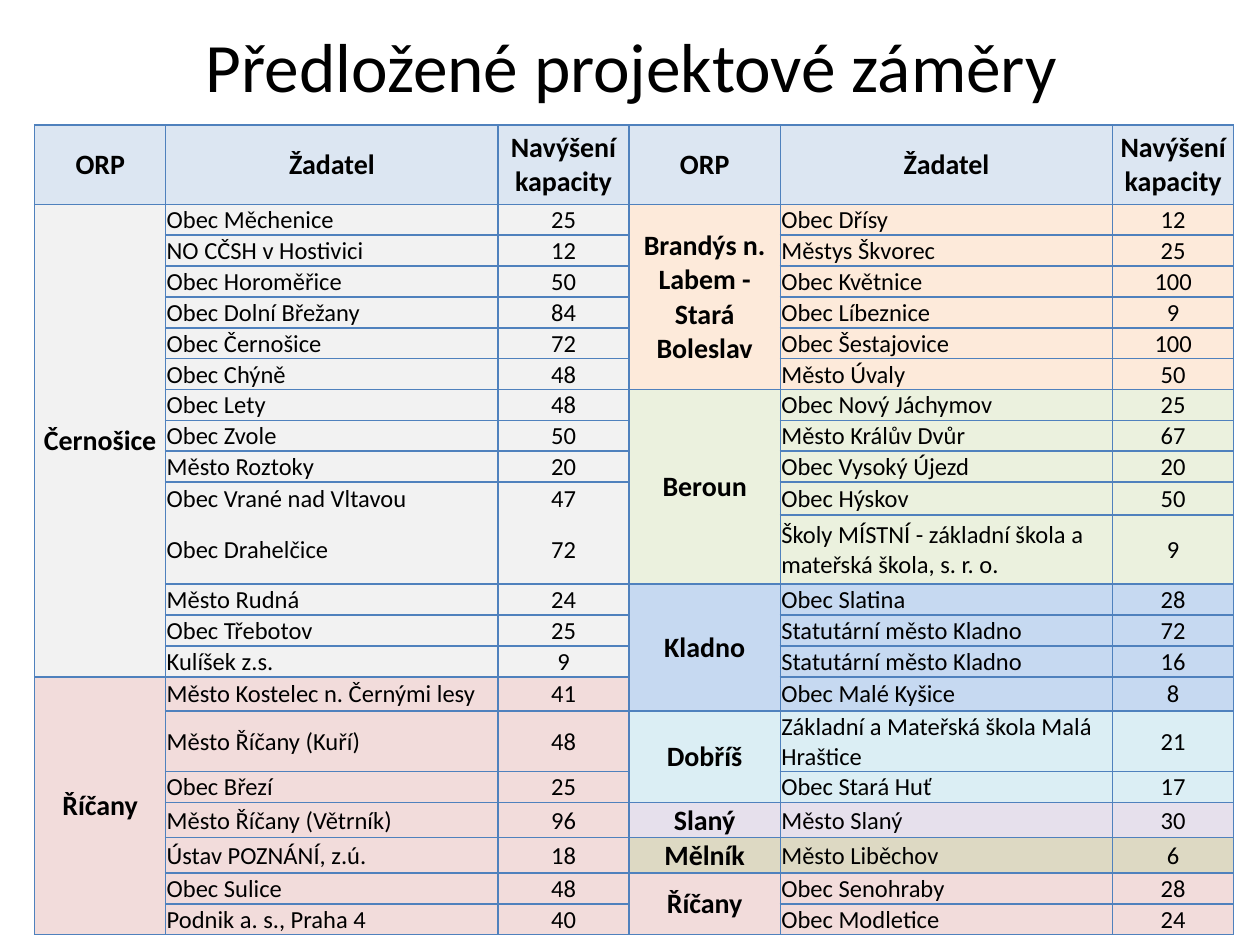
from lxml.etree import SubElement
from pptx import Presentation
from pptx.dml.color import RGBColor
from pptx.enum.text import MSO_ANCHOR, MSO_AUTO_SIZE, PP_ALIGN
from pptx.oxml import parse_xml
from pptx.oxml.ns import nsdecls, qn
from pptx.util import Cm, Pt

# Content
TITLE = "Předložené projektové záměry"
HEADERS = ["ORP", "Žadatel", "Navýšení kapacity"]

# Per half of the table: (region, fill name, [(applicant, capacity, rows if not 1)])
LEFT = [
    ("Černošice", "grey", [
        ("Obec Měchenice", 25), ("NO CČSH v Hostivici", 12),
        ("Obec Horoměřice", 50), ("Obec Dolní Břežany", 84),
        ("Obec Černošice", 72), ("Obec Chýně", 48),
        ("Obec Lety", 48), ("Obec Zvole", 50),
        ("Město Roztoky", 20), ("Obec Vrané nad Vltavou", 47),
        ("Obec Drahelčice", 72, 2), ("Město Rudná", 24),
        ("Obec Třebotov", 25), ("Kulíšek z.s.", 9)]),
    ("Říčany", "rose", [
        ("Město Kostelec n. Černými lesy", 41), ("Město Říčany (Kuří)", 48),
        ("Obec Březí", 25), ("Město Říčany (Větrník)", 96),
        ("Ústav POZNÁNÍ, z.ú.", 18), ("Obec Sulice", 48),
        ("Podnik a. s., Praha 4", 40)]),
]
RIGHT = [
    ("Brandýs n. Labem - Stará Boleslav", "orange", [
        ("Obec Dřísy", 12), ("Městys Škvorec", 25), ("Obec Květnice", 100),
        ("Obec Líbeznice", 9), ("Obec Šestajovice", 100), ("Město Úvaly", 50)]),
    ("Beroun", "green", [
        ("Obec Nový Jáchymov", 25), ("Město Králův Dvůr", 67),
        ("Obec Vysoký Újezd", 20), ("Obec Hýskov", 50, 2),
        ("Školy MÍSTNÍ - základní škola a mateřská škola, s. r. o.", 9)]),
    ("Kladno", "blue", [
        ("Obec Slatina", 28), ("Statutární město Kladno", 72),
        ("Statutární město Kladno", 16), ("Obec Malé Kyšice", 8)]),
    ("Dobříš", "aqua", [
        ("Základní a Mateřská škola Malá Hraštice", 21), ("Obec Stará Huť", 17)]),
    ("Slaný", "violet", [("Město Slaný", 30)]),
    ("Mělník", "sand", [("Město Liběchov", 6)]),
    ("Říčany", "rose", [("Obec Senohraby", 28), ("Obec Modletice", 24)]),
]
UNRULED = ("Obec Vrané nad Vltavou", "Obec Drahelčice")  # no line between these two

# Theme
THEME = {
    "font": "Calibri", "text": "000000", "line": "4F81BD", "line_width": Pt(1),
    "title_size": Pt(39.6), "head_size": Pt(16), "body_size": Pt(14),
    "fills": {"header": "DCE6F2", "grey": "F2F2F2", "rose": "F2DCDB",
              "orange": "FDEADA", "green": "EBF1DE", "blue": "C6D9F1",
              "aqua": "DBEEF4", "violet": "E6E0EC", "sand": "DDD9C3"},
}

# Grid in centimetres
COLS = [2.64, 6.7, 2.64, 3.05, 6.7, 2.44]
ROWS = [1.6] + [0.56] * 22
for row, height in {10: 0.66, 11: 0, 12: 1.4, 16: 0.69, 17: 0.94}.items():
    ROWS[row] = height


def set_attrs(obj, values):
    for name, value in values.items():
        setattr(obj, name, value)


def set_font(font, size, bold=False):
    set_attrs(font, {"name": THEME["font"], "size": size, "bold": bold})
    font.color.rgb = RGBColor.from_string(THEME["text"])


def set_borders(cell, hidden=None):
    tcPr = cell._tc.get_or_add_tcPr()
    for i, side in enumerate(("lnL", "lnR", "lnT", "lnB")):
        ln = parse_xml(f'<a:{side} {nsdecls("a")} w="{THEME["line_width"]}"/>')
        if side == hidden:
            SubElement(ln, qn("a:noFill"))
        else:
            fill = SubElement(ln, qn("a:solidFill"))
            SubElement(fill, qn("a:srgbClr"), val=THEME["line"])
        tcPr.insert(i, ln)


def put(table, row, col, text, fill, span=1, heading=False, centred=True):
    cell = table.cell(row, col)
    if span > 1:
        cell.merge(table.cell(row + span - 1, col))
    set_attrs(cell, {"text": text, "vertical_anchor": MSO_ANCHOR.MIDDLE})
    p = cell.text_frame.paragraphs[0]
    p.alignment = PP_ALIGN.CENTER if centred else PP_ALIGN.LEFT
    set_font(p.runs[0].font, THEME["head_size" if heading else "body_size"], heading)
    for r in range(row, row + span):
        part = table.cell(r, col)
        set_attrs(part, {"margin_left": Cm(0.02), "margin_right": Cm(0.02),
                         "margin_top": Cm(0.02), "margin_bottom": 0})
        part.fill.solid()
        part.fill.fore_color.rgb = RGBColor.from_string(THEME["fills"][fill])


def fill_half(table, col, regions):
    for i, header in enumerate(HEADERS):
        put(table, 0, col + i, header, "header", heading=True)
    row = 1
    for region, fill, applicants in regions:
        start = row
        for applicant, capacity, *rows in applicants:
            span = rows[0] if rows else 1
            put(table, row, col + 1, applicant, fill, span, centred=False)
            put(table, row, col + 2, str(capacity), fill, span)
            row += span
        put(table, start, col, region, fill, row - start, heading=True)


def hidden_side(table, row, col):
    """Side without a line, for the capacity column as for its applicant."""
    if col not in (1, 2):
        return None
    name = table.cell(row, 1).text
    return dict(zip(UNRULED, ("lnB", "lnT"))).get(name)


def main():
    prs = Presentation()
    set_attrs(prs, {"slide_width": Cm(25.4), "slide_height": Cm(19.05)})
    s = prs.slides.add_slide(prs.slide_layouts[5])

    # Title
    title = s.shapes.title
    set_attrs(title, {"left": Cm(1.3), "top": Cm(0.53),
                      "width": Cm(22.86), "height": Cm(1.55)})
    tf = title.text_frame
    set_attrs(tf, {"text": TITLE, "auto_size": MSO_AUTO_SIZE.NONE,
                   "vertical_anchor": MSO_ANCHOR.MIDDLE})
    p = tf.paragraphs[0]
    p.alignment = PP_ALIGN.CENTER
    set_font(p.runs[0].font, THEME["title_size"])

    # Table of projects
    table = s.shapes.add_table(len(ROWS), len(COLS), Cm(0.7), Cm(2.52),
                               Cm(sum(COLS)), Cm(sum(ROWS))).table
    set_attrs(table, {"first_row": False, "horz_banding": False})
    for column, width in zip(table.columns, COLS):
        column.width = Cm(width)
    for row, height in zip(table.rows, ROWS):
        row.height = Cm(height)
    fill_half(table, 0, LEFT)
    fill_half(table, 3, RIGHT)
    for r in range(len(ROWS)):
        for c in range(len(COLS)):
            set_borders(table.cell(r, c), hidden_side(table, r, c))

    prs.save("out.pptx")


if __name__ == "__main__":
    main()
